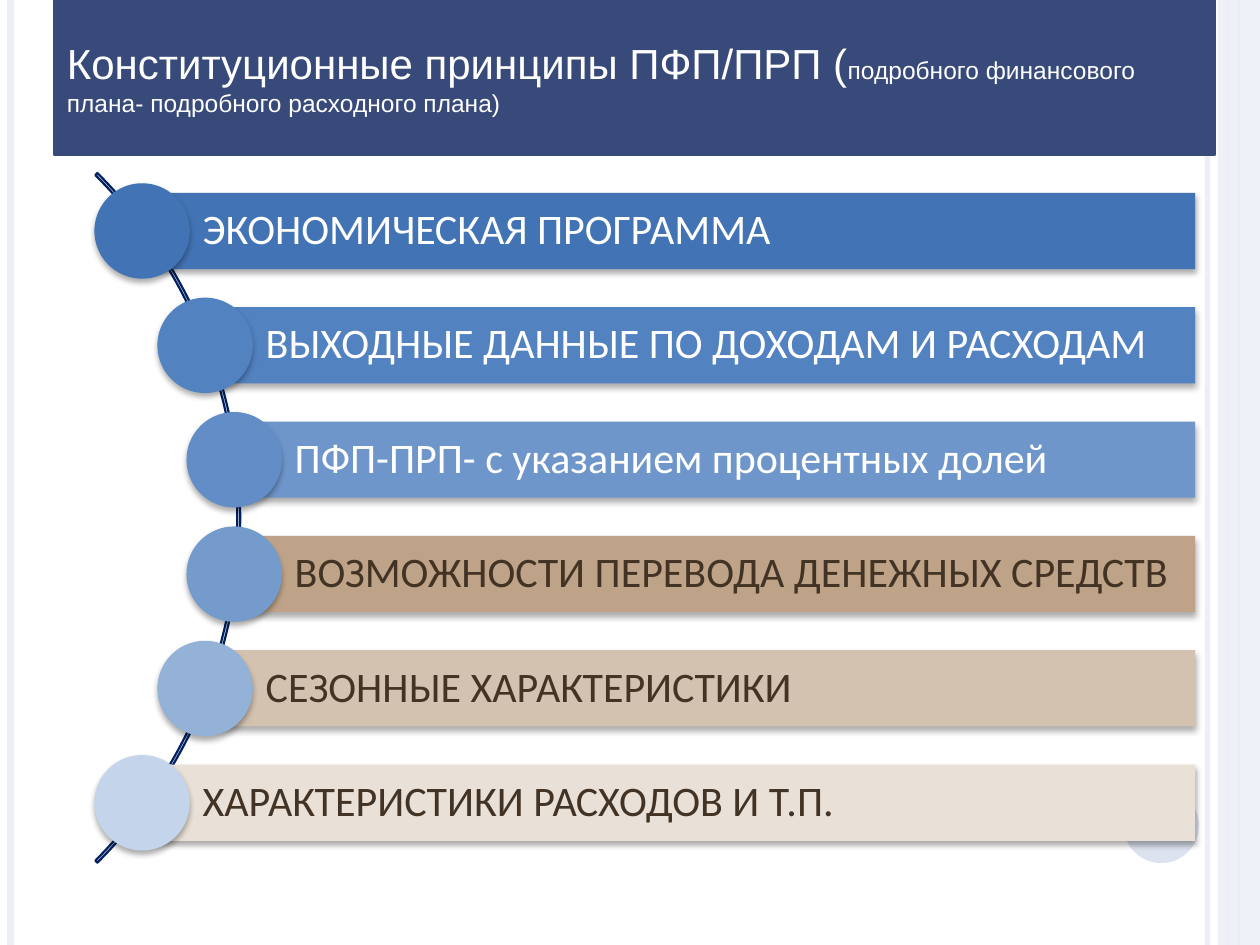
from dataclasses import dataclass

from lxml import etree
from pptx import Presentation
from pptx.dml.color import RGBColor
from pptx.enum.shapes import MSO_CONNECTOR, MSO_SHAPE
from pptx.enum.text import MSO_ANCHOR, MSO_AUTO_SIZE, PP_ALIGN
from pptx.oxml.ns import qn
from pptx.util import Pt

LINE = MSO_CONNECTOR.STRAIGHT
RECT, OVAL, ARC = MSO_SHAPE.RECTANGLE, MSO_SHAPE.OVAL, MSO_SHAPE.BLOCK_ARC
MIDDLE = MSO_ANCHOR.MIDDLE
LEFT = PP_ALIGN.LEFT
NO_FIT = MSO_AUTO_SIZE.NONE

WIDE, HIGH = 720, 540


@dataclass(frozen=True)
class Theme:
    navy: str = "384A79"
    curve: str = "002060"
    pale: str = "EBEEF6"
    mist: str = "DDE2EF"
    white: str = "FFFFFF"
    brown: str = "423324"
    head_font: str = "Arial"
    body_font: str = "Calibri"
    big: int = 24
    small: int = 14


THEME = Theme()

# text, circle centre x, bar colour, circle colour, text colour
ROWS = [
    ("ЭКОНОМИЧЕСКАЯ ПРОГРАММА", 81.2, "4273B4", "4273B4", THEME.white),
    ("ВЫХОДНЫЕ ДАННЫЕ ПО ДОХОДАМ И РАСХОДАМ", 117.2, "5382C1", "5382C1", THEME.white),
    ("ПФП-ПРП- с указанием процентных долей", 133.8, "6F96CB", "628DC6", THEME.white),
    ("ВОЗМОЖНОСТИ ПЕРЕВОДА ДЕНЕЖНЫХ СРЕДСТВ", 133.8, "BEA388", "759BCD", THEME.brown),
    ("СЕЗОННЫЕ ХАРАКТЕРИСТИКИ", 117.2, "D4C2B0", "94B1D8", THEME.brown),
    ("ХАРАКТЕРИСТИКИ РАСХОДОВ И Т.П.", 81.2, "E9E0D7", "C4D4EA", THEME.brown),
]
FIRST, PITCH = 132, 65.35
BAR_HIGH, BAR_END, DISC = 43.6, 683, 54.5

# x, colour, weight, opacity in percent
STRIPES = [
    (690, THEME.pale, 3, 93),
    (6, THEME.pale, 4.5, 100),
    (708, THEME.mist, 1.5, 100),
    (702, THEME.mist, 0.75, 100),
]


def rgb(code):
    return RGBColor.from_string(code)


def fade(fill, percent):
    """Make a solid fill partly transparent."""
    color = fill._xPr.find(qn("a:solidFill"))[0]
    etree.SubElement(color, qn("a:alpha"), val=str(percent * 1000))


class Deck:
    def __init__(self, theme):
        self.theme = theme
        self.file = Presentation()
        self.file.slide_width, self.file.slide_height = Pt(WIDE), Pt(HIGH)
        self.slide = self.file.slides.add_slide(self.file.slide_layouts[5])
        self.shapes = self.slide.shapes

    def shape(self, kind, x, y, w, h, fill=None):
        item = self.shapes.add_shape(kind, Pt(x), Pt(y), Pt(w), Pt(h))
        if fill:
            item.fill.solid()
            item.fill.fore_color.rgb = rgb(fill)
        else:
            item.fill.background()
        item.line.fill.background()
        item.shadow.inherit = False
        return item

    def shade(self, item):
        """Add a soft shadow straight below the shape."""
        effects = item._element.spPr.find(qn("a:effectLst"))
        outer = etree.SubElement(
            effects, qn("a:outerShdw"), blurRad=str(Pt(3.5)), dist=str(Pt(2.2)),
            dir="5400000", algn="ctr", rotWithShape="0")
        color = etree.SubElement(outer, qn("a:srgbClr"), val="000000")
        etree.SubElement(color, qn("a:alpha"), val="32000")

    def stripe(self, x, color, weight, percent):
        item = self.shapes.add_connector(LINE, Pt(x), 0, Pt(x), Pt(HIGH))
        item.line.color.rgb = rgb(color)
        item.line.width = Pt(weight)
        if percent < 100:
            fade(item.line.fill, percent)
        etree.SubElement(item._element.spPr, qn("a:effectLst"))

    def curve(self, x, y, size):
        item = self.shape(ARC, x, y, size, size)
        for index, value in enumerate((189, 27, 0.003)):
            item.adjustments[index] = value
        item.line.color.rgb = rgb(self.theme.curve)
        item.line.width = Pt(1.25)

    def bar(self, text, x, mid, fill, color):
        item = self.shape(RECT, x, mid - BAR_HIGH / 2, BAR_END - x, BAR_HIGH, fill)
        self.shade(item)
        frame = item.text_frame
        frame.word_wrap = True
        frame.vertical_anchor = MIDDLE
        frame.margin_left = Pt(34.6)
        frame.margin_right = frame.margin_top = frame.margin_bottom = Pt(5)
        para = frame.paragraphs[0]
        para.text = text
        para.alignment = LEFT
        para.line_spacing = 0.9
        para.font.name = self.theme.body_font
        para.font.size = Pt(self.theme.big)
        para.font.color.rgb = rgb(color)

    def disc(self, x, mid, fill):
        self.shade(self.shape(OVAL, x - DISC / 2, mid - DISC / 2, DISC, DISC, fill))

    def title(self, x, y, w, h, parts):
        """Turn the title into an L-shaped block in front of the stripes."""
        item = self.shapes.title
        self.shapes._spTree.append(item._element)
        item.left, item.top, item.width, item.height = Pt(x), Pt(y), Pt(w), Pt(h)
        form = etree.SubElement(item._element.spPr, qn("a:prstGeom"), prst="corner")
        etree.SubElement(form, qn("a:avLst"))
        item.fill.solid()
        item.fill.fore_color.rgb = rgb(self.theme.navy)
        item.line.color.rgb = rgb(self.theme.navy)
        item.line.width = Pt(1.25)
        frame = item.text_frame
        frame.word_wrap = True
        frame.auto_size = NO_FIT
        frame.vertical_anchor = MIDDLE
        para = frame.paragraphs[0]
        para.alignment = LEFT
        para.font.name = self.theme.head_font
        para.font.color.rgb = rgb(self.theme.white)
        for text, size in parts:
            run = para.add_run()
            run.text = text
            run.font.size = Pt(size)


def main():
    deck = Deck(THEME)
    for stripe in STRIPES:
        deck.stripe(*stripe)
    edge = deck.shape(RECT, 696, 0, 24, HIGH, THEME.pale)
    fade(edge.fill, 87)
    deck.shape(OVAL, 642, 450, 43.2, 43.2, THEME.mist)

    deck.curve(-420, 17.3, 557.3)
    for index, (text, x, fill, dot, color) in enumerate(ROWS):
        mid = FIRST + index * PITCH
        deck.bar(text, x, mid, fill, color)
        deck.disc(x, mid, dot)

    deck.title(31, 0, 663.5, 88.5, [
        ("Конституционные принципы ПФП/ПРП (", THEME.big),
        ("подробного финансового плана- подробного расходного плана)", THEME.small),
    ])
    deck.file.save("out.pptx")


if __name__ == "__main__":
    main()
